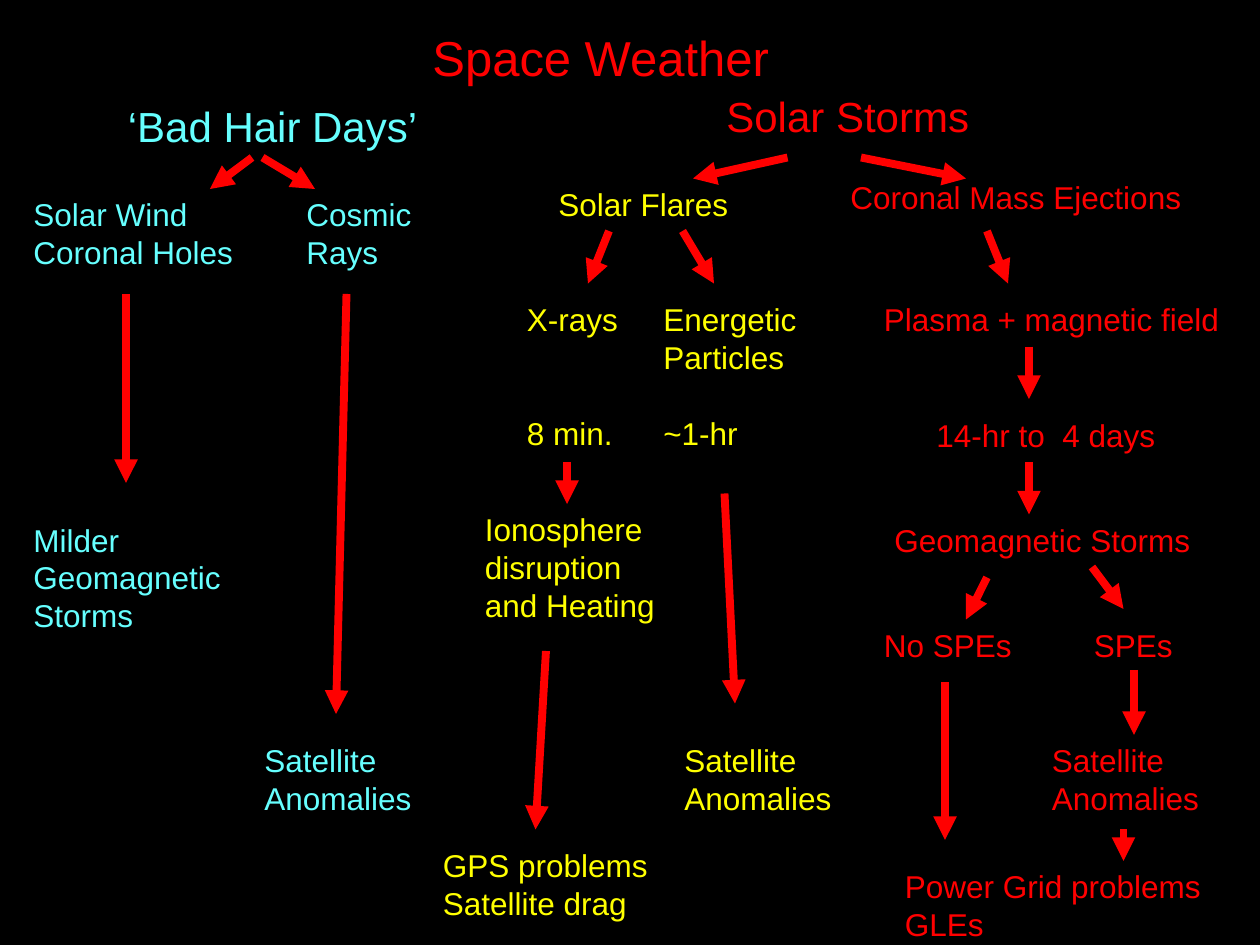
from pptx import Presentation
from pptx.dml.color import RGBColor
from pptx.enum.shapes import MSO_CONNECTOR
from pptx.util import Inches, Pt
from lxml.etree import SubElement
from pptx.oxml.ns import qn

RED, CYAN, YELLOW = "FF0000", "66FFFF", "FFFF00"
LINE_PITCH = 21.6  # points per line of 18 pt text


def rgb(hex_color):
    return RGBColor.from_string(hex_color)


def grid(units):
    """Length of grid units; the slide is 120 columns by 90 rows."""
    return Inches(units / 12)


prs = Presentation()
prs.slide_width, prs.slide_height = grid(120), grid(90)
s = prs.slides.add_slide(prs.slide_layouts[6])
s.background.fill.solid()
s.background.fill.fore_color.rgb = rgb("000000")

# column, row, width, size, colour, text, blank lines before the last paragraph
labels = [
    (40, 2, 34.7, 28, RED, "Space Weather", 0),
    (11, 9, 30, 24, CYAN, "‘Bad Hair Days’", 0),
    (2, 18, 21.4, 18, CYAN, "Solar Wind\nCoronal Holes", 0),
    (28, 18, 12.4, 18, CYAN, "Cosmic\nRays", 0),
    (2, 49, 21, 18, CYAN, "Milder\nGeomagnetic\nStorms", 0),
    (24, 70, 16.4, 18, CYAN, "Satellite\nAnomalies", 0),
    (68, 8, 25.6, 24, RED, "Solar Storms", 0),
    (52, 17, 18.6, 18, YELLOW, "Solar Flares", 0),
    (49, 28, 11.3, 18, YELLOW, "X-rays\n8 min.", 2),
    (62, 28, 15.1, 18, YELLOW, "Energetic\nParticles\n~1-hr", 1),
    (45, 48, 18.6, 18, YELLOW, "Ionosphere\ndisruption\nand Heating", 0),
    (41, 80, 22, 18, YELLOW, "GPS problems\nSatellite drag", 0),
    (64, 70, 16.4, 18, YELLOW, "Satellite\nAnomalies", 0),
    (79.8, 16.4, 34, 18, RED, "Coronal Mass Ejections", 0),
    (83, 28, 34.3, 18, RED, "Plasma + magnetic field", 0),
    (88, 39, 23.3, 18, RED, "14-hr to  4 days", 0),
    (84, 49, 33, 18, RED, "Geomagnetic Storms", 0),
    (83, 59, 14.6, 18, RED, "No SPEs", 0),
    (103, 59, 10, 18, RED, "SPEs", 0),
    (99, 70, 16.4, 18, RED, "Satellite\nAnomalies", 0),
    (85, 82, 30.6, 18, RED, "Power Grid problems\nGLEs", 0),
]
boxes = []
for col, row, width, size, color, text, gap in labels:
    lines = text.count("\n") + 1 + gap
    sp = s.shapes.add_textbox(grid(col), grid(row), grid(width),
                              Inches(0.1 + lines * size / 60))
    boxes.append(sp)
    tf = sp.text_frame
    tf.word_wrap = False
    tf.text = text
    if gap:
        tf.paragraphs[-1].space_before = Pt(gap * LINE_PITCH)
    for p in tf.paragraphs:
        for r in p.runs:
            r.font.name, r.font.size = "Arial", Pt(size)
            r.font.color.rgb = rgb(color)

# start column, start row, end column, end row
arrows = [
    (24, 15, 20, 18), (25, 15, 30, 18),
    (12, 28, 12, 46), (33, 28, 32, 68),
    (75, 15, 66, 17), (82, 15, 92, 17),
    (58, 22, 56, 27), (65, 22, 68, 27),
    (54, 44, 54, 48), (52, 62, 51, 79), (69, 47, 70, 67),
    (94, 22, 96, 27), (98, 33, 98, 38), (98, 44, 98, 49),
    (94, 55, 92, 59), (104, 54, 107, 58),
    (90, 65, 90, 80), (108, 64, 108, 70), (107, 79, 107, 82),
]
tolerance = grid(0.25)
for x1, y1, x2, y2 in arrows:
    c = s.shapes.add_connector(MSO_CONNECTOR.STRAIGHT,
                               grid(x1), grid(y1), grid(x2), grid(y2))
    c.line.color.rgb = rgb(RED)
    c.line.width = Pt(4.5)
    SubElement(c.line._get_or_add_ln(), qn("a:tailEnd"), type="triangle")
    SubElement(c._element.spPr, qn("a:effectLst"))
    # Join arrows that meet the middle of a label's top or bottom side
    for sp in boxes:
        middle, bottom = sp.left + sp.width / 2, sp.top + sp.height
        if max(abs(middle - grid(x1)), abs(bottom - grid(y1))) < tolerance:
            c.begin_connect(sp, 2)
        if max(abs(middle - grid(x2)), abs(sp.top - grid(y2))) < tolerance:
            c.end_connect(sp, 0)

prs.save("out.pptx")
